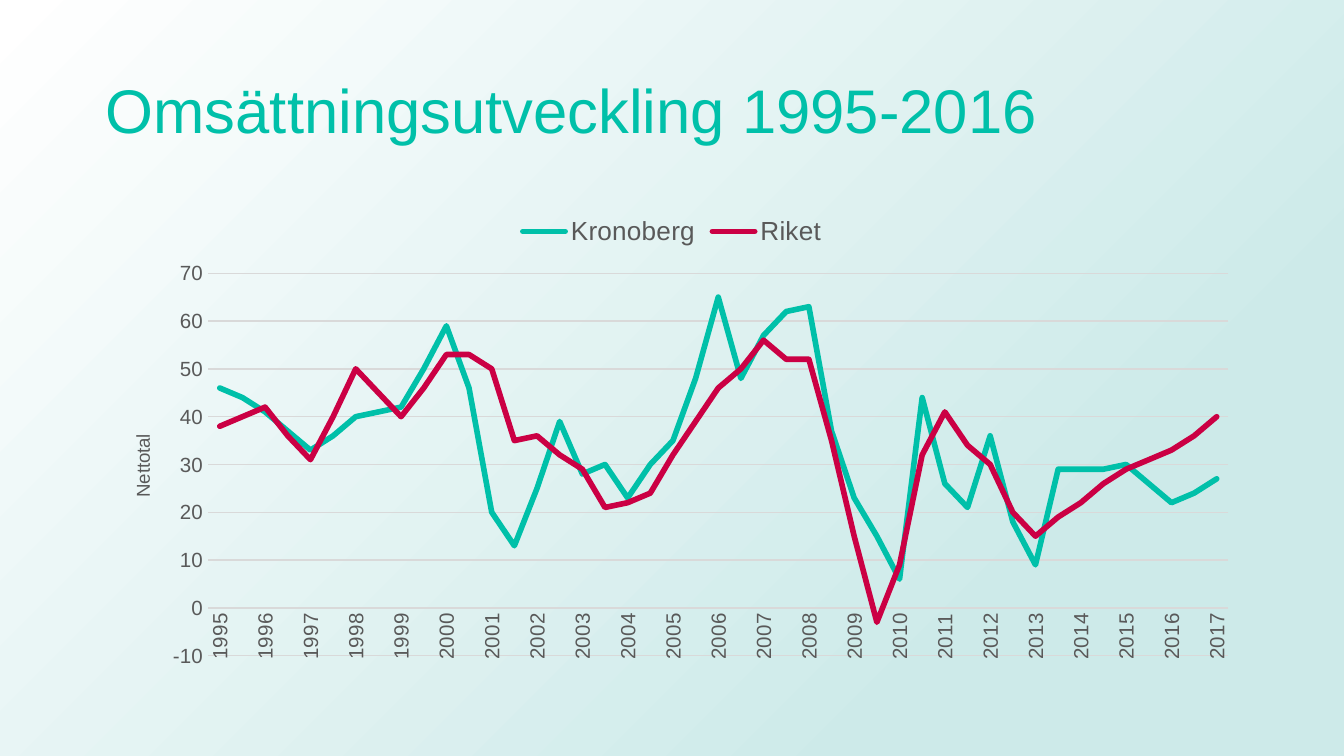
from lxml import etree
from pptx import Presentation
from pptx import util as u
from pptx.chart import data
from pptx.dml import color
from pptx.enum import chart as charts
from pptx.enum import shapes, text
from pptx.oxml import ns

COLOURS = {
    "teal": "00C0A9",
    "crimson": "CB0044",
    "mist": "CDEAE9",
    "white": "FFFFFF",
    "grey": "595959",
    "grid": "D9D9D9",
}
YEARS = [str(1995 + half // 2) for half in range(45)]
TURNOVER = {
    "Kronoberg": ("teal", [
        46, 44, 41, 37, 33, 36, 40, 41, 42, 50, 59, 46, 20, 13, 25,
        39, 28, 30, 23, 30, 35, 48, 65, 48, 57, 62, 63, 37, 23, 15,
        6, 44, 26, 21, 36, 18, 9, 29, 29, 29, 30, 26, 22, 24, 27]),
    "Riket": ("crimson", [
        38, 40, 42, 36, 31, 40, 50, 45, 40, 46, 53, 53, 50, 35, 36,
        32, 29, 21, 22, 24, 32, 39, 46, 50, 56, 52, 52, 35, 15, -3,
        9, 32, 41, 34, 30, 20, 15, 19, 22, 26, 29, 31, 33, 36, 40]),
}
VALUE_SCALE = {
    "minimum_scale": -10,
    "maximum_scale": 70,
    "major_unit": 10,
    "has_major_gridlines": True,
}


def rgb(name):
    return color.RGBColor.from_string(COLOURS[name])


def apply(target, values):
    for name, value in values.items():
        setattr(target, name, value)


class Deck:
    font = "Arial"

    def __init__(self, width, height):
        self.deck = Presentation()
        apply(self.deck, {"slide_width": width, "slide_height": height})
        self.slide = self.deck.slides.add_slide(self.deck.slide_layouts[6])

    def style_font(self, font, size, colour):
        apply(font, {"name": self.font, "size": u.Pt(size), "bold": False})
        font.color.rgb = rgb(colour)

    def style_line(self, line, colour, width):
        line.color.rgb = rgb(colour)
        line.width = u.Pt(width)

    def place(self, parent, index, **fractions):
        for old in parent.findall(ns.qn("c:layout")):
            parent.remove(old)
        layout = etree.Element(ns.qn("c:layout"))
        manual = etree.SubElement(layout, ns.qn("c:manualLayout"))
        for tag, value in fractions.items():
            etree.SubElement(manual, ns.qn(f"c:{tag}")).set("val", str(value))
        parent.insert(index, layout)

    def backdrop(self):
        backdrop = self.slide.shapes.add_shape(
            shapes.MSO_SHAPE.RECTANGLE, 0, 0,
            self.deck.slide_width, self.deck.slide_height)
        backdrop.shadow.inherit = False
        backdrop.line.fill.background()
        backdrop.fill.gradient()
        stops = zip(backdrop.fill.gradient_stops,
                    [(0.23, "mist"), (1, "white")])
        for stop, (position, colour) in stops:
            stop.position = position
            stop.color.rgb = rgb(colour)
        gradient = backdrop._element.spPr.find(ns.qn("a:gradFill"))
        gradient.remove(gradient.find(ns.qn("a:lin")))
        circle = etree.SubElement(gradient, ns.qn("a:path"), path="circle")
        etree.SubElement(circle, ns.qn("a:fillToRect"), l="100000", t="100000")

    def title(self, wording, left, top, width, height):
        frame = self.slide.shapes.add_textbox(
            left, top, width, height).text_frame
        apply(frame, {"word_wrap": True,
                      "vertical_anchor": text.MSO_ANCHOR.MIDDLE})
        heading = frame.paragraphs[0]
        heading.line_spacing = 0.9
        run = heading.add_run()
        run.text = wording
        self.style_font(run.font, 33, "teal")

    def line_chart(self, years, turnover, left, top, width, height):
        figures = data.CategoryChartData(number_format="0")
        figures.categories = years
        for region, (_, values) in turnover.items():
            figures.add_series(region, values)
        chart = self.slide.shapes.add_chart(
            charts.XL_CHART_TYPE.LINE, left, top, width, height, figures).chart
        apply(chart, {"has_title": False, "has_legend": True})
        apply(chart.legend, {"position": charts.XL_LEGEND_POSITION.TOP,
                             "include_in_layout": False})
        self.style_font(chart.legend.font, 14, "grey")
        plot = chart.plots[0]
        plot.vary_by_categories = False
        for series, (colour, _) in zip(plot.series, turnover.values()):
            series.smooth = False
            self.style_line(series.format.line, colour, 3)
            series.format.line._get_or_add_ln().set("cap", "rnd")
        self.year_axis(chart.category_axis)
        self.value_axis(chart.value_axis)
        self.place(chart._chartSpace.chart.plotArea, 0, layoutTarget="inner",
                   xMode="edge", yMode="edge", x=0.1, y=0.15, w=0.88, h=0.8)

    def axis(self, axis):
        apply(axis, {"major_tick_mark": charts.XL_TICK_MARK.NONE,
                     "minor_tick_mark": charts.XL_TICK_MARK.NONE})
        self.style_font(axis.tick_labels.font, 11, "grey")

    def year_axis(self, axis):
        self.axis(axis)
        self.style_line(axis.format.line, "grid", 0.75)
        turned = axis._element.find(f".//{ns.qn('a:bodyPr')}")
        turned.set("rot", "-5400000")
        turned.set("vert", "horz")
        skip = etree.Element(ns.qn("c:tickLblSkip"), val="2")
        axis._element.find(ns.qn("c:lblOffset")).addnext(skip)

    def value_axis(self, axis):
        self.axis(axis)
        apply(axis, VALUE_SCALE)
        apply(axis.tick_labels, {"number_format": "0",
                                 "number_format_is_linked": False})
        axis.format.line.fill.background()
        self.style_line(axis.major_gridlines.format.line, "grid", 0.75)
        frame = axis.axis_title.text_frame
        frame.text = "Nettotal"
        self.style_font(frame.paragraphs[0].runs[0].font, 10, "grey")
        turned = axis.axis_title._element.find(f".//{ns.qn('a:bodyPr')}")
        turned.set("rot", "-5400000")
        turned.set("vert", "horz")
        self.place(axis.axis_title._element, 1,
                   xMode="edge", yMode="edge", x=0.03, y=0.48)


def main():
    deck = Deck(u.Cm(25.4), u.Cm(14.29))
    deck.backdrop()
    deck.title("Omsättningsutveckling 1995-2016",
               u.Cm(1.75), u.Cm(0.76), u.Cm(21.9), u.Cm(2.77))
    deck.line_chart(YEARS, TURNOVER,
                    u.Cm(1.75), u.Cm(3.81), u.Cm(21.9), u.Cm(9.04))
    deck.deck.save("out.pptx")


if __name__ == "__main__":
    main()
